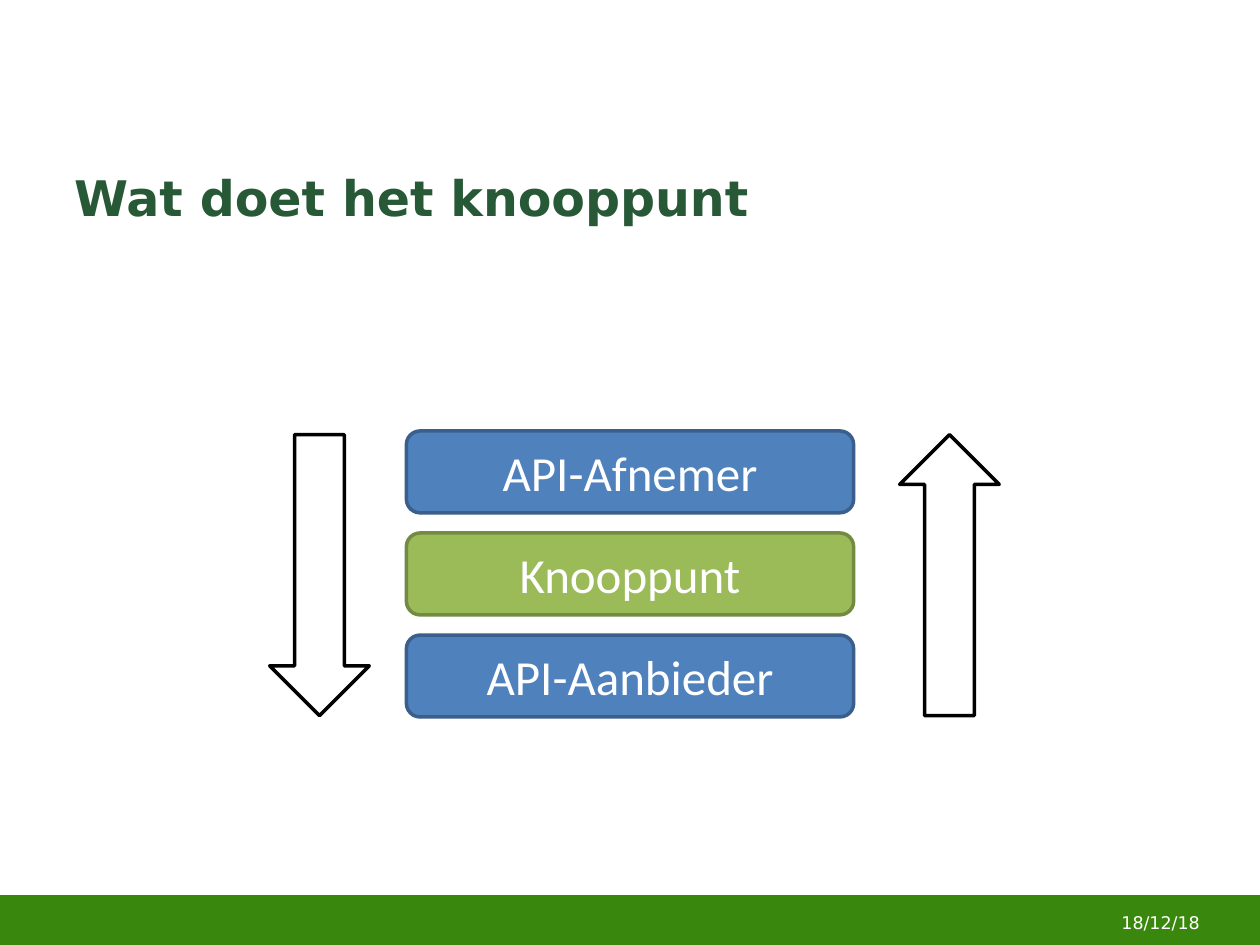
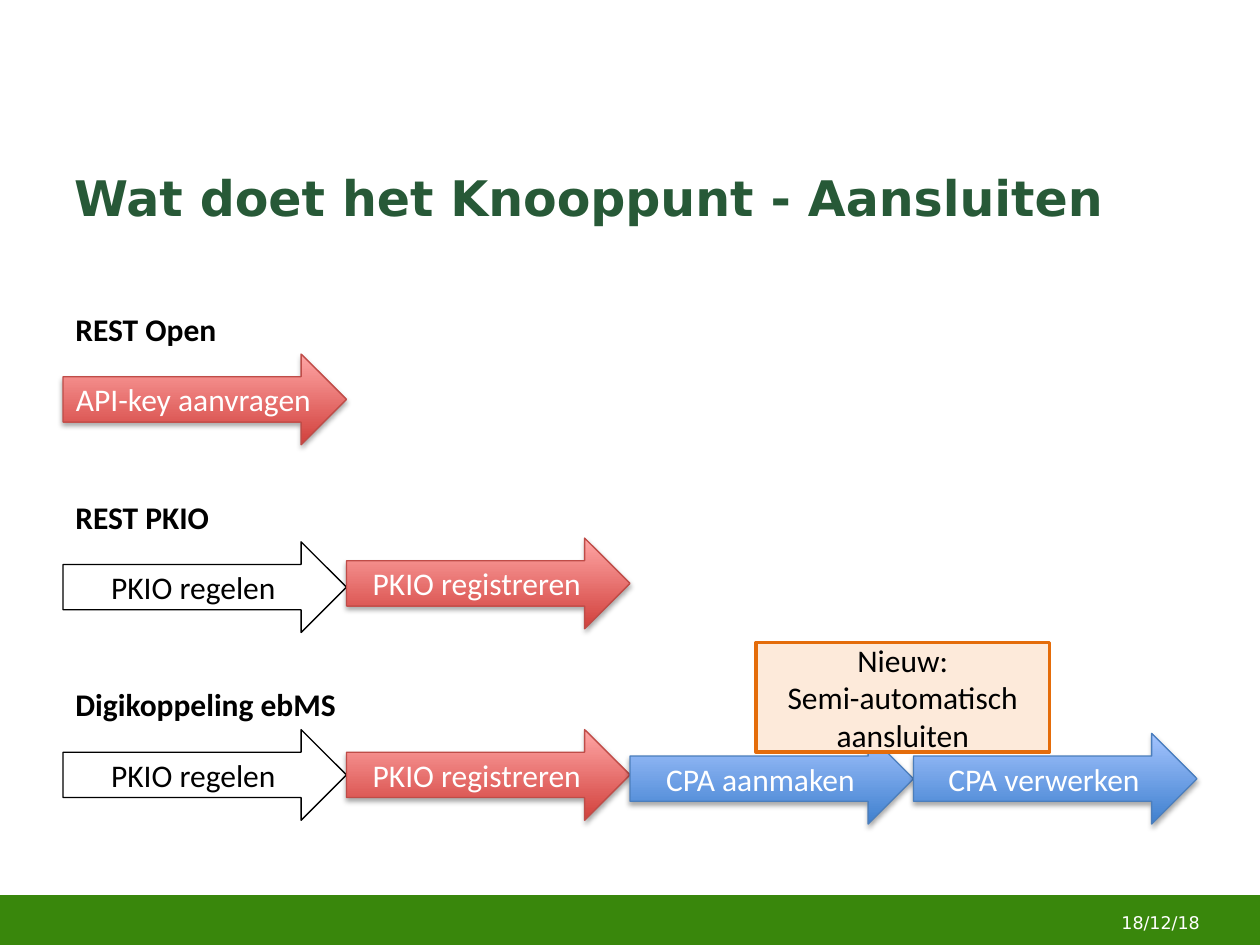
from dataclasses import dataclass
from typing import Optional

from lxml.etree import SubElement
from pptx import Presentation
from pptx.dml.color import RGBColor
from pptx.enum.shapes import MSO_SHAPE
from pptx.enum.text import MSO_ANCHOR, PP_ALIGN
from pptx.oxml.ns import qn
from pptx.util import Emu, Inches, Pt

COLORS = {
    "white": "FFFFFF", "black": "000000",
    "band": "39870C", "title": "275937",
    "blue": "4F81BD", "blue_edge": "3A5F8C",
    "green": "9BBB59", "green_edge": "738A42",
    "red_dark": "D1403C", "red_light": "FFA6A5", "red_edge": "BF4C48",
    "sky_dark": "3F80CE", "sky_light": "A4C4FF", "sky_edge": "4B7EBC",
    "note": "FDEADA", "note_edge": "E46C0A",
}
HEAD_FONT, BODY_FONT = "DejaVu Sans", "Calibri"
WIDTH, HEIGHT = Inches(10), Inches(7.5)
COL, ROW = WIDTH / 100, HEIGHT / 75  # grid of 100 columns by 75 rows
DATE = "18/12/18"


@dataclass(frozen=True)
class Box:
    """A place on the grid: columns across, rows down."""
    x: float
    y: float
    w: float
    h: float

    def emu(self) -> tuple:
        return (Emu(round(self.x * COL)), Emu(round(self.y * ROW)),
                Emu(round(self.w * COL)), Emu(round(self.h * ROW)))


@dataclass(frozen=True)
class Style:
    """One fill colour is solid, two are a gradient from bottom to top."""
    fills: tuple
    edge: str
    weight: float = 2
    text: str = "white"
    size: int = 18


@dataclass(frozen=True)
class Step:
    text: str
    style: Style
    drop: float = 0  # rows below the lane's line


@dataclass(frozen=True)
class Lane:
    label: str
    steps: tuple


BAND = Style(("band",), "band")
PARTY = Style(("blue",), "blue_edge", size=28)
HUB = Style(("green",), "green_edge", size=28)
FLOW = Style(("white",), "black")
PREPARE = Style((), "black", 0.75, "black")
REGISTER = Style(("red_dark", "red_light"), "red_edge", 0.75)
CONTRACT = Style(("sky_dark", "sky_light"), "sky_edge", 0.75)
NOTE = Style(("note",), "note_edge", text="black")

LAYERS = (("API-Afnemer", PARTY), ("Knooppunt", HUB), ("API-Aanbieder", PARTY))
LANES = (
    Lane("REST Open", (Step("API-key aanvragen", REGISTER),)),
    Lane("REST PKIO", (Step("PKIO regelen", PREPARE),
                       Step("PKIO registreren", REGISTER, -0.3))),
    Lane("Digikoppeling ebMS", (Step("PKIO regelen", PREPARE),
                                Step("PKIO registreren", REGISTER),
                                Step("CPA aanmaken", CONTRACT, 0.3),
                                Step("CPA verwerken", CONTRACT, 0.3))),
)


def rgb(name: str) -> RGBColor:
    return RGBColor.from_string(COLORS[name])


def write(tf, text: str, size: int, color: str, font: str = BODY_FONT,
          bold: bool = False, align=PP_ALIGN.LEFT) -> None:
    tf.text = text
    for p in tf.paragraphs:
        p.alignment = align
        for r in p.runs:
            r.font.name, r.font.size, r.font.bold = font, Pt(size), bold
            r.font.color.rgb = rgb(color)


def add_text(s, box: Box, text: str, size: int, color: str, *,
             anchor=MSO_ANCHOR.TOP, **look) -> None:
    tf = s.shapes.add_textbox(*box.emu()).text_frame
    tf.word_wrap, tf.vertical_anchor = True, anchor
    write(tf, text, size, color, **look)


def add_soft_shadow(sp) -> None:
    effects = sp._element.spPr.find(qn("a:effectLst"))
    shadow = SubElement(effects, qn("a:outerShdw"), blurRad=str(Pt(3.1)),
                        dist=str(Pt(1.8)), dir="5400000", rotWithShape="0")
    color = SubElement(shadow, qn("a:srgbClr"), val=COLORS["black"])
    SubElement(color, qn("a:alpha"), val="35000")


def add_box(s, kind, box: Box, style: Style, text: Optional[str] = None) -> None:
    sp = s.shapes.add_shape(kind, *box.emu())
    sp.shadow.inherit = False
    sp.line.color.rgb, sp.line.width = rgb(style.edge), Pt(style.weight)
    if len(style.fills) == 2:
        sp.fill.gradient()
        sp.fill.gradient_angle = 90
        for stop, name in zip(sp.fill.gradient_stops, style.fills):
            stop.color.rgb = rgb(name)
        add_soft_shadow(sp)
    elif style.fills:
        sp.fill.solid()
        sp.fill.fore_color.rgb = rgb(style.fills[0])
    else:
        sp.fill.background()
    if text:
        tf = sp.text_frame
        tf.margin_left = tf.margin_right = Inches(0.05)
        tf.word_wrap, tf.vertical_anchor = True, MSO_ANCHOR.MIDDLE
        write(tf, text, style.size, style.text, align=PP_ALIGN.CENTER)


def add_base_slide(prs, title: str):
    """Add a slide with the footer band, title and date."""
    s = prs.slides.add_slide(prs.slide_layouts[6])
    add_box(s, MSO_SHAPE.RECTANGLE, Box(0, 71.2, 100, 3.9), BAND)
    add_text(s, Box(4.9, 12.8, 90, 7.3), title, 28, "title",
             font=HEAD_FONT, bold=True)
    add_text(s, Box(72.9, 71.2, 23.3, 4), DATE, 10, "white", font=HEAD_FONT,
             anchor=MSO_ANCHOR.MIDDLE, align=PP_ALIGN.RIGHT)
    return s


def add_layers_slide(prs) -> None:
    s = add_base_slide(prs, "Wat doet het knooppunt")
    for i, (text, style) in enumerate(LAYERS):
        add_box(s, MSO_SHAPE.ROUNDED_RECTANGLE,
                Box(32.25, 34.2 + 8.1 * i, 35.5, 6.5), style, text)
    for x, kind in ((21.4, MSO_SHAPE.DOWN_ARROW), (71.4, MSO_SHAPE.UP_ARROW)):
        add_box(s, kind, Box(x, 34.5, 7.9, 22.3), FLOW)


def add_lanes_slide(prs) -> None:
    s = add_base_slide(prs, "Wat doet het Knooppunt - Aansluiten")
    left, top, pitch, step_w, label_w = 5, 28.1, 14.9, 22.5, 30
    for i, lane in enumerate(LANES):
        y = top + pitch * i
        add_text(s, Box(left, y - 4, label_w, 4), lane.label, 18, "black",
                 bold=True)
        for j, step in enumerate(lane.steps):
            add_box(s, MSO_SHAPE.RIGHT_ARROW,
                    Box(left + step_w * j, y + step.drop, step_w, 7.2),
                    step.style, step.text)
    add_box(s, MSO_SHAPE.RECTANGLE, Box(60, 51, 23.3, 8.7), NOTE,
            "Nieuw:\nSemi-automatisch aansluiten")


def main() -> None:
    prs = Presentation()
    prs.slide_width, prs.slide_height = WIDTH, HEIGHT
    add_layers_slide(prs)
    add_lanes_slide(prs)
    prs.save("out.pptx")


if __name__ == "__main__":
    main()
